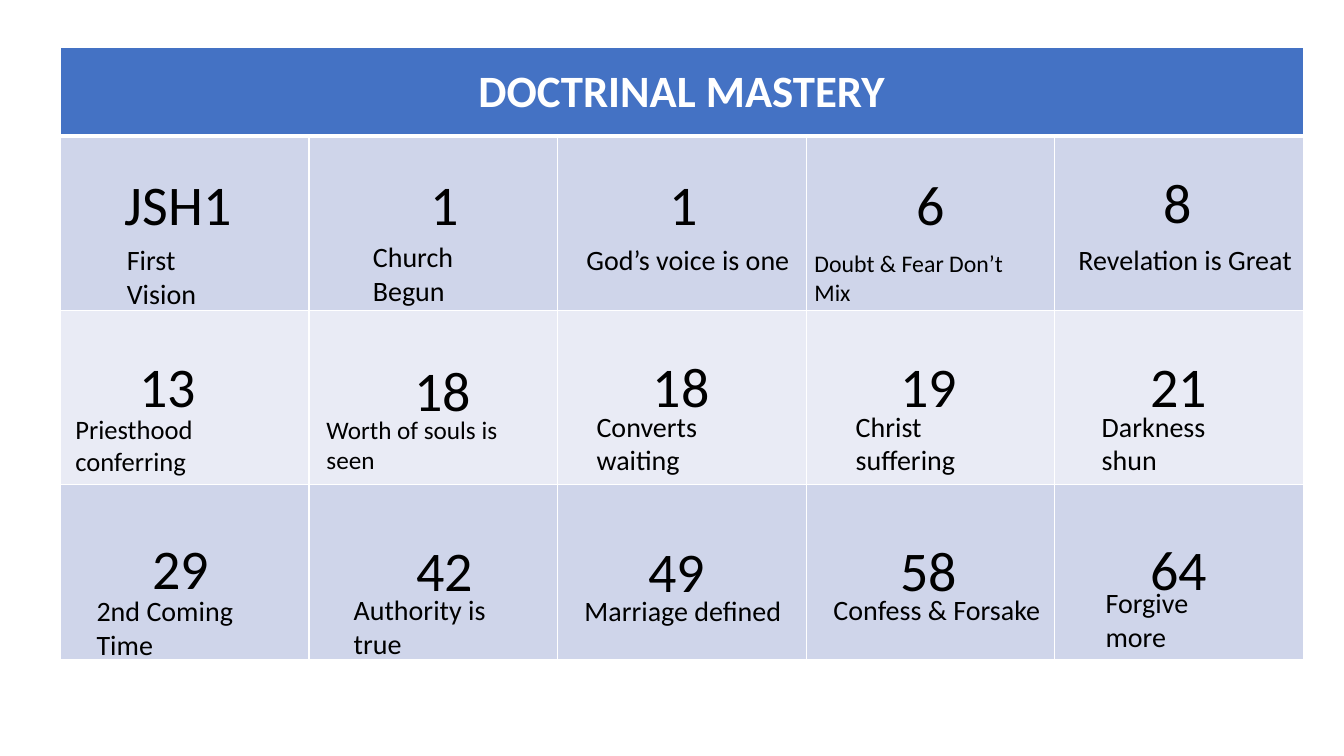
from typing import NamedTuple

from lxml import etree
from pptx import Presentation
from pptx.dml import color
from pptx.enum import text
from pptx.oxml import ns
from pptx.util import Pt

FONT = "Calibri"
COLUMNS = 5
TABLE_LEFT, TABLE_TOP, TABLE_WIDTH = 43.2, 33.84, 887.76
HEADER_HEIGHT, ROW_HEIGHT = 63.36, 124.56
COLUMN_WIDTH = TABLE_WIDTH / COLUMNS
BAND_FILLS = ["CFD5EA", "E9EBF5", "CFD5EA"]


class Verse(NamedTuple):
    number: str
    number_left: float
    number_top: float
    phrase: str
    phrase_left: float
    phrase_top: float
    phrase_width: float
    phrase_size: int = 20


VERSES = [
    [
        Verse("JSH1", 38.9, 20.2, "First Vision", 40.3, 72.7, 98),
        Verse("1", 79.5, 20.2, "Church Begun", 38.5, 70.6, 122),
        Verse("1", 72.6, 20.2, "God’s voice is one", 13.5, 72.7, 162),
        Verse("6", 71.5, 20.2, "Doubt & Fear Don’t Mix", -1.2, 77, 176, 17),
        Verse("8", 70.3, 18.7, "Revelation is Great", 9.8, 72.7, 170),
    ],
    [
        Verse("13", 49, 26, "Priesthood conferring", 3.6, 69.8, 175, 19),
        Verse("18", 68, 28.8, "Worth of souls is seen", 5.4, 70.5, 169, 18),
        Verse("18", 61, 26, "Converts waiting", 20.7, 67, 145),
        Verse("19", 60, 26, "Christ suffering", 28.3, 67, 133),
        Verse("21", 61, 26, "Darkness shun", 26.4, 67, 123),
    ],
    [
        Verse("29", 58.3, 31, "2nd Coming Time", 18.7, 74.2, 152),
        Verse("42", 69.5, 32.4, "Authority is true", 24.8, 73.5, 139),
        Verse("49", 57.5, 33.1, "Marriage defined", 12.1, 74.2, 162),
        Verse("58", 60, 32.4, "Confess & Forsake", 12.4, 73.5, 165),
        Verse("64", 61, 31.7, "Forgive more", 29.2, 68.4, 119),
    ],
]


def rgb(value):
    return color.RGBColor.from_string(value)


def format_font(font, size, hex_color, bold=False):
    font.name = FONT
    font.size = Pt(size)
    font.bold = bold
    font.color.rgb = rgb(hex_color)


def style_cell(cell, fill, bottom_width=1, top_width=1):
    cell.fill.solid()
    cell.fill.fore_color.rgb = rgb(fill)
    properties = cell._tc.get_or_add_tcPr()
    widths = {"lnL": 1, "lnR": 1, "lnT": top_width, "lnB": bottom_width}
    for index, (side, width) in enumerate(widths.items()):
        line = etree.Element(ns.qn(f"a:{side}"), w=str(Pt(width)))
        solid = etree.SubElement(line, ns.qn("a:solidFill"))
        etree.SubElement(solid, ns.qn("a:srgbClr"), val="FFFFFF")
        properties.insert(index, line)


def add_mastery_table(slide, left, top, width):
    height = HEADER_HEIGHT + ROW_HEIGHT * len(VERSES)
    frame = slide.shapes.add_table(
        len(VERSES) + 1, COLUMNS, Pt(left), Pt(top), Pt(width), Pt(height)
    )
    table = frame.table
    for column in table.columns:
        column.width = Pt(width / COLUMNS)
    for index, row in enumerate(table.rows):
        row.height = Pt(ROW_HEIGHT if index else HEADER_HEIGHT)
        for cell in row.cells:
            if index == 0:
                style_cell(cell, "4472C4", bottom_width=3)
            else:
                style_cell(cell, BAND_FILLS[index - 1], top_width=3 if index == 1 else 1)

    header = table.cell(0, 0)
    header.merge(table.cell(0, COLUMNS - 1))
    header.text_frame.text = "DOCTRINAL MASTERY"
    header.vertical_anchor = text.MSO_ANCHOR.MIDDLE
    paragraph = header.text_frame.paragraphs[0]
    paragraph.alignment = text.PP_ALIGN.CENTER
    format_font(paragraph.runs[0].font, 32, "FFFFFF", bold=True)


def add_label(slide, words, left, top, width, height, size):
    shape = slide.shapes.add_textbox(Pt(left), Pt(top), Pt(width), Pt(height))
    frame = shape.text_frame
    frame.word_wrap = True
    frame.text = words
    format_font(frame.paragraphs[0].runs[0].font, size, "000000")


def add_verse(slide, verse, left, top):
    number_width = 100 if len(verse.number) > 2 else 15 + 22 * len(verse.number)
    add_label(slide, verse.number, left + verse.number_left, top + verse.number_top,
              number_width, 55.7, 40)
    add_label(slide, verse.phrase, left + verse.phrase_left, top + verse.phrase_top,
              verse.phrase_width, 31.5, verse.phrase_size)


def main():
    presentation = Presentation()
    presentation.slide_width, presentation.slide_height = Pt(960), Pt(540)
    slide = presentation.slides.add_slide(presentation.slide_layouts[6])
    add_mastery_table(slide, TABLE_LEFT, TABLE_TOP, TABLE_WIDTH)
    for row, verses in enumerate(VERSES):
        top = TABLE_TOP + HEADER_HEIGHT + row * ROW_HEIGHT
        for column, verse in enumerate(verses):
            add_verse(slide, verse, TABLE_LEFT + column * COLUMN_WIDTH, top)
    presentation.save("out.pptx")


if __name__ == "__main__":
    main()
